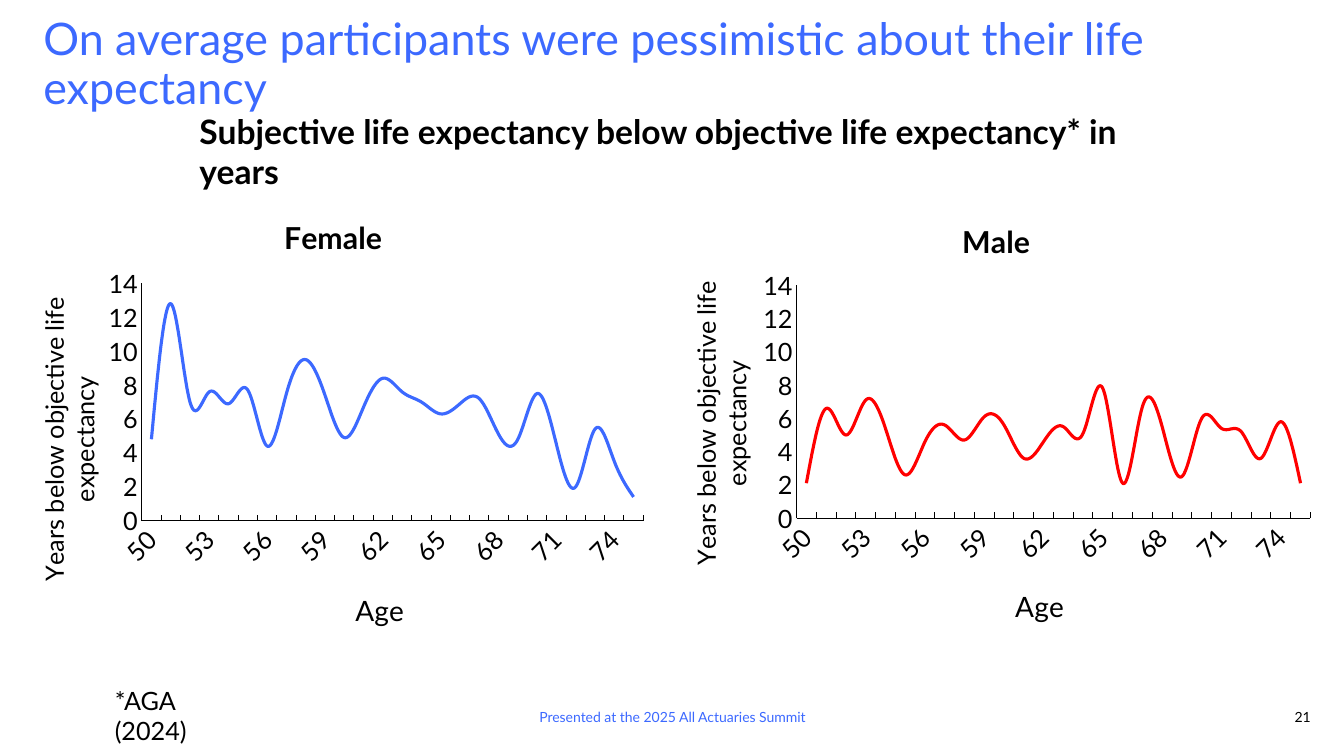
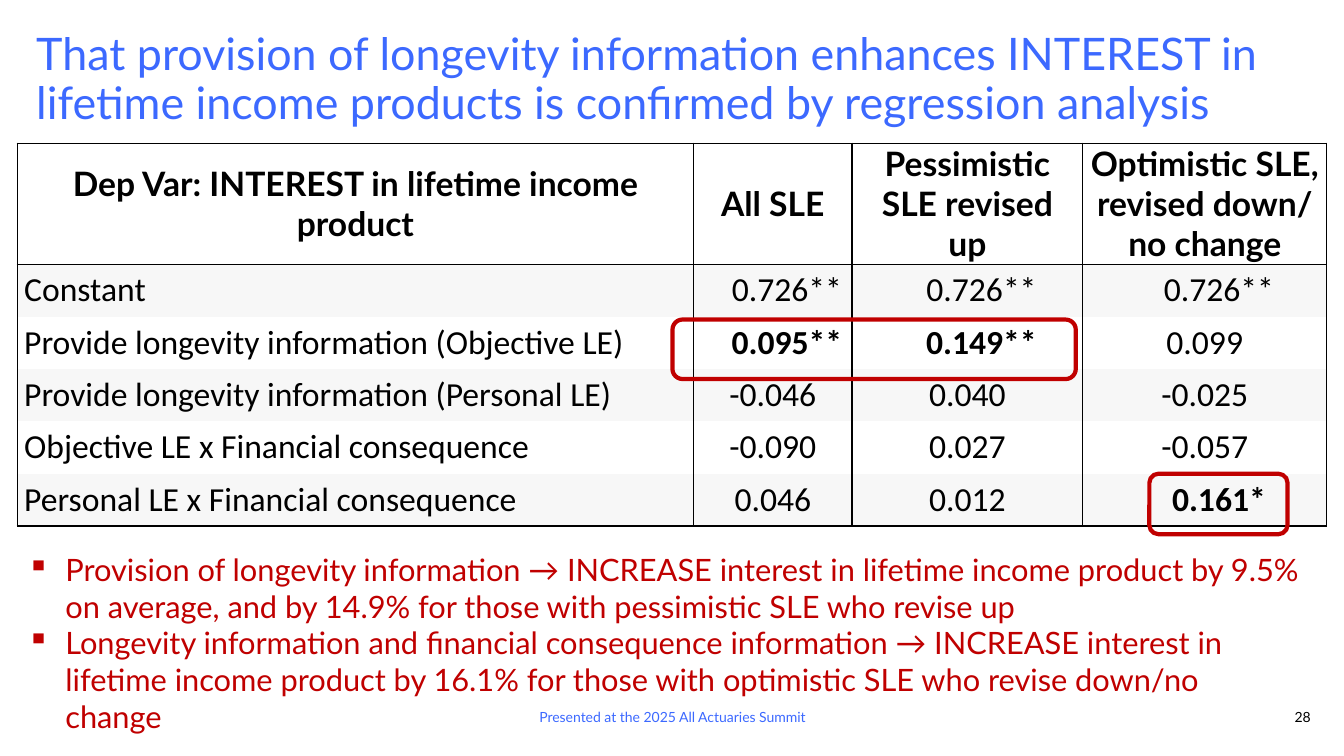
from lxml import etree
from pptx import Presentation
from pptx.chart.data import CategoryChartData
from pptx.dml.color import RGBColor
from pptx.enum.chart import XL_CHART_TYPE, XL_TICK_MARK
from pptx.enum.shapes import MSO_SHAPE
from pptx.enum.text import MSO_ANCHOR, PP_ALIGN
from pptx.oxml.ns import qn
from pptx.util import Pt

PX = 9144
BLANK_LAYOUT = 6
LINE, STACKED = XL_CHART_TYPE.LINE, XL_CHART_TYPE.LINE_STACKED
TICK_NONE, TICK_INSIDE = XL_TICK_MARK.NONE, XL_TICK_MARK.INSIDE
ROUNDED = MSO_SHAPE.ROUNDED_RECTANGLE
TOP, MIDDLE, BOTTOM = MSO_ANCHOR.TOP, MSO_ANCHOR.MIDDLE, MSO_ANCHOR.BOTTOM
LEFT, CENTER, RIGHT = PP_ALIGN.LEFT, PP_ALIGN.CENTER, PP_ALIGN.RIGHT

BLUE, RED, DARK_RED, BLACK, BAND = "3C69FF", "FF0000", "C00000", "000000", "F7F7F7"
FOOTER = "Presented at the 2025 All Actuaries Summit"

AGES = [str(age) for age in range(50, 76)]
FEMALE = [4.8, 12.8, 7, 7.6, 6.9, 7.7, 4.4, 7.5, 9.5, 7.4, 4.9, 6.7, 8.4,
          7.6, 7, 6.3, 6.9, 7.2, 5.1, 4.8, 7.5, 4.5, 2, 5.4, 3.5, 1.4]
MALE = [2.1, 6.6, 5, 7.1, 5.4, 2.6, 4.6, 5.6, 4.7, 6.1, 5.6, 3.6, 4.6,
        5.5, 5.1, 7.8, 2.1, 6.7, 5.5, 2.5, 6, 5.4, 5.2, 3.6, 5.8, 2.1]

REGRESSION = [
    ["Dep Var: INTEREST in lifetime income product", "All SLE",
     "Pessimistic SLE revised up", "Optimistic SLE, revised down/ no change"],
    ["Constant", "0.726**", "0.726**", "0.726**"],
    ["Provide longevity information (Objective LE)", "0.095**", "0.149**", "0.099"],
    ["Provide longevity information (Personal LE)", "-0.046", "0.040", "-0.025"],
    ["Objective LE x Financial consequence", "-0.090", "0.027", "-0.057"],
    ["Personal LE x Financial consequence", "0.046", "0.012", "0.161*"],
]
SIGNIFICANT = {"0.095**", "0.149**", "0.161*"}
FINDINGS = [
    "Provision of longevity information → INCREASE interest in lifetime income product "
    "by 9.5% on average, and by 14.9% for those with pessimistic SLE who revise up",
    "Longevity information and financial consequence information → INCREASE interest in "
    "lifetime income product by 16.1% for those with optimistic SLE who revise down/no change",
]


def color(value):
    """Turn a hex string into a colour."""
    return RGBColor.from_string(value)


def apply(target, formats):
    """Set each named attribute on the target."""
    for name, value in formats.items():
        setattr(target, name, value)


def child(parent, tag, **attributes):
    """Add one XML child with its attributes."""
    element = etree.SubElement(parent, qn(tag))
    for name, value in attributes.items():
        element.set(name, str(value))
    return element


class Deck:
    """Hold the presentation style and the current slide."""

    def __init__(self):
        """Start an empty wide presentation."""
        self.presentation = Presentation()
        apply(self.presentation, {"slide_width": 1333 * PX, "slide_height": 750 * PX})
        self.slide = None

    def add_slide(self, title, box, number):
        """Add a slide with its title, footer and number."""
        layout = self.presentation.slide_layouts[BLANK_LAYOUT]
        self.slide = self.presentation.slides.add_slide(layout)
        self.text([title], box, 32, BLUE, inset=False, spacing=0.9)
        self.text([str(number)], (1254, 700, 46, 20), 10, BLACK, inset=False,
                  anchor=BOTTOM, alignment=RIGHT)
        self.text([FOOTER], (442, 700, 450, 20), 10, BLUE, inset=False,
                  anchor=BOTTOM, alignment=CENTER)

    def place(self, box):
        """Turn px lengths into EMU."""
        return [length * PX for length in box]

    def font(self, font, size, value, bold=False, name="Lato"):
        """Format one font."""
        apply(font, {"size": Pt(size), "bold": bold, "name": name})
        font.color.rgb = color(value)

    def text(self, lines, box, size, value, bold=False, inset=True, anchor=TOP,
             alignment=LEFT, spacing=1.0, bullet=None):
        """Add a text box with one paragraph per line."""
        frame = self.slide.shapes.add_textbox(*self.place(box)).text_frame
        apply(frame, {"word_wrap": True, "vertical_anchor": anchor})
        if not inset:
            apply(frame, {"margin_left": 0, "margin_top": 0,
                          "margin_right": 0, "margin_bottom": 0})
        for index, line in enumerate(lines):
            paragraph = frame.add_paragraph() if index else frame.paragraphs[0]
            apply(paragraph, {"alignment": alignment, "line_spacing": spacing})
            run = paragraph.add_run()
            run.text = line
            self.font(run.font, size, value, bold)
            if bullet:
                properties = paragraph._p.get_or_add_pPr()
                properties.set("marL", str(38 * PX))
                properties.set("indent", str(-38 * PX))
                child(properties, "a:buChar", char=bullet)

    def layout(self, element, **fractions):
        """Fix the place of a chart part within its chart."""
        layout = element.find(qn("c:layout"))
        if layout is None:
            layout = etree.Element(qn("c:layout"))
            element.insert(0 if element.find(qn("c:tx")) is None else 1, layout)
        manual = child(layout, "c:manualLayout")
        if "w" in fractions:
            child(manual, "c:layoutTarget", val="inner")
        for name in "xy":
            child(manual, f"c:{name}Mode", val="edge")
        for name, value in fractions.items():
            child(manual, f"c:{name}", val=value)

    def chart_title(self, title, words, size, x, y, bold=False):
        """Write and place a chart or axis title."""
        frame = title.text_frame
        frame.text = words
        self.font(frame.paragraphs[0].runs[0].font, size, BLACK, bold)
        self.layout(title.element, x=x, y=y)

    def line_chart(self, kind, title, values, box, value, title_x, axis_title_y):
        """Add a smoothed line chart over age."""
        data = CategoryChartData()
        data.categories = AGES
        data.add_series("Series 1", values)
        chart = self.slide.shapes.add_chart(kind, *self.place(box), data).chart
        apply(chart, {"has_legend": False, "has_title": True})
        self.font(chart.font, 18, BLACK)
        self.chart_title(chart.chart_title, title, 21.6, title_x, 0.05, True)
        plot = chart.plots[0]
        plot.vary_by_categories = False
        series = plot.series[0]
        series.smooth = True
        self.line(series.format.line, value, 2.25)
        axes = [(chart.category_axis, TICK_INSIDE, "Age", 20, 0.53, 0.87),
                (chart.value_axis, TICK_NONE, "Years below objective life expectancy",
                 18, 0.04, axis_title_y)]
        for axis, tick, words, size, x, y in axes:
            apply(axis, {"has_major_gridlines": False, "major_tick_mark": tick,
                         "minor_tick_mark": TICK_NONE, "has_title": True})
            self.font(axis.tick_labels.font, 18, BLACK)
            self.line(axis.format.line, BLACK, 0.75)
            self.chart_title(axis.axis_title, words, size, x, y)
        apply(chart.value_axis, {"minimum_scale": 0, "maximum_scale": 14, "major_unit": 2})
        for part, angle in (("c:catAx/c:txPr", -45), ("c:valAx/c:title//c:rich", -90)):
            body = chart.element.xpath(f".//{part}/a:bodyPr")[0]
            body.set("rot", str(angle * 60000))
            body.set("vert", "horz")
        self.layout(chart.element.xpath(".//c:plotArea")[0], x=0.21, y=0.21, w=0.77, h=0.52)

    def line(self, line, value, width):
        """Format one line."""
        line.color.rgb = color(value)
        line.width = Pt(width)

    def borders(self, cell, sides):
        """Draw the named sides of a cell and clear the others."""
        properties = cell._tc.get_or_add_tcPr()
        for side in "LRTB":
            border = child(properties, f"a:ln{side}", w=Pt(1))
            if side in sides:
                child(child(border, "a:solidFill"), "a:srgbClr", val=BLACK)
            else:
                child(border, "a:noFill")

    def table(self, rows, box, widths, heights):
        """Add a banded table with a bold header and ruled columns."""
        shape = self.slide.shapes.add_table(len(rows), len(widths), *self.place(box))
        table = shape.table
        apply(table, {"first_row": False, "horz_banding": False})
        for column, width in zip(table.columns, widths):
            column.width = width * PX
        for row, height in zip(table.rows, heights):
            row.height = height * PX
        for row_index, row in enumerate(rows):
            header = row_index == 0
            sides = "LR" + "T" * (row_index < 2) + "B" * (row_index in (0, len(rows) - 1))
            for column_index, words in enumerate(row):
                cell = table.cell(row_index, column_index)
                starred = words.endswith("*")
                apply(cell, {"margin_left": (35 if starred else 7) * PX,
                             "margin_right": 7 * PX, "margin_top": 0,
                             "margin_bottom": 0, "vertical_anchor": MIDDLE})
                self.borders(cell, sides)
                if row_index % 2:
                    cell.fill.solid()
                    cell.fill.fore_color.rgb = color(BAND)
                else:
                    cell.fill.background()
                paragraph = cell.text_frame.paragraphs[0]
                paragraph.alignment = CENTER if header or column_index else LEFT
                run = paragraph.add_run()
                run.text = words
                self.font(run.font, 24, BLACK, header or words in SIGNIFICANT,
                          "Lato" if header else "Calibri")

    def highlight(self, box, rounding):
        """Frame a result with a red rounded outline."""
        shape = self.slide.shapes.add_shape(ROUNDED, *self.place(box))
        shape.shadow.inherit = False
        shape.adjustments[0] = rounding
        shape.fill.background()
        self.line(shape.line, DARK_RED, 3)


def main():
    """Build both slides and save them."""
    deck = Deck()
    deck.add_slide("On average participants were pessimistic about their life expectancy",
                   (43, 17, 1257, 54), 21)
    deck.line_chart(STACKED, "Female", FEMALE, (5, 186, 646, 453), BLUE, 0.42, 0.23)
    deck.line_chart(LINE, "Male", MALE, (651, 190, 662, 444), RED, 0.45, 0.19)
    deck.text(["Subjective life expectancy below objective life expectancy* in years"],
              (188, 105, 973, 50), 24, BLACK, bold=True)
    deck.text(["*AGA (2024)"], (104, 675, 150, 40), 18, BLACK)

    deck.add_slide("That provision of longevity information enhances INTEREST in lifetime "
                   "income products is confirmed by regression analysis",
                   (36, 32, 1264, 140), 28)
    deck.table(REGRESSION, (17, 142, 1299, 358), (671, 157, 229, 242), [98] + [52] * 5)
    deck.highlight((667, 317, 400, 59), 0.17)
    deck.highlight((1140, 470, 137, 60), 0.15)
    deck.text(FINDINGS, (17, 541, 1281, 158), 22, DARK_RED, bullet="▪")
    deck.presentation.save("out.pptx")


if __name__ == "__main__":
    main()
